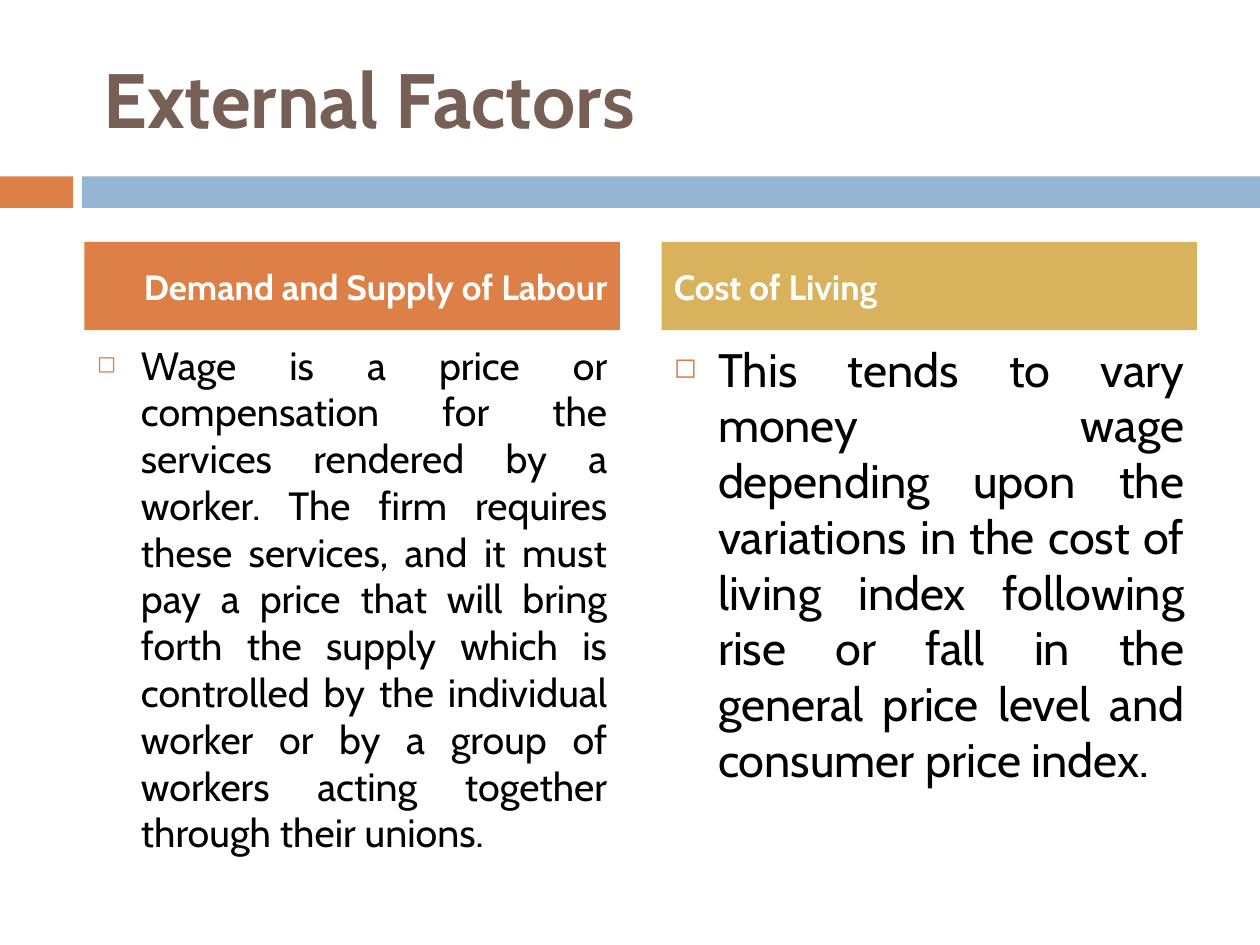
from dataclasses import dataclass

from lxml.etree import SubElement
from pptx import Presentation
from pptx.dml.color import RGBColor
from pptx.enum.shapes import MSO_SHAPE as Shape
from pptx.enum.text import MSO_ANCHOR as Anchor, PP_ALIGN as Align
from pptx.oxml.ns import qn
from pptx.util import Inches, Pt

FONT = "Cabin"
ORANGE, BLUE, GOLD = "DD8047", "94B6D2", "D8B25C"
BROWN, BLACK, WHITE = "775F55", "000000", "FFFFFF"

# Two equal columns, measured in inches
COLUMN_LEFT, COLUMN_WIDTH, COLUMN_STEP = 0.67, 4.25, 4.58
HEADING_TOP, HEADING_HEIGHT = 1.92, 0.7
BODY_TOP, BODY_HEIGHT = 2.67, 3.92
BAND_TOP, BAND_HEIGHT = 1.4, 0.25
INDENT = 0.35


@dataclass
class Factor:
    heading: str
    heading_align: Align
    color: str
    body: str
    body_size: float


FACTORS = [
    Factor("Demand and Supply of Labour", Align.RIGHT, ORANGE,
           "Wage is a price or compensation for the services rendered by a "
           "worker. The firm requires these services, and it must pay a price "
           "that will bring forth the supply which is controlled by the "
           "individual worker or by a group of workers acting together "
           "through their unions.", 22.5),
    Factor("Cost of Living", Align.JUSTIFY, GOLD,
           "This tends to vary money wage depending upon the variations in the "
           "cost of living index following rise or fall in the general price "
           "level and consumer price index.", 26.8),
]


def rgb(color: str) -> RGBColor:
    return RGBColor.from_string(color)


def add_bar(slide, left: float, top: float, width: float, height: float, color: str):
    bar = slide.shapes.add_shape(
        Shape.RECTANGLE, Inches(left), Inches(top), Inches(width), Inches(height))
    bar.fill.solid()
    bar.fill.fore_color.rgb = rgb(color)
    bar.line.fill.background()
    bar.shadow.inherit = False
    return bar


def add_box(slide, left: float, top: float, width: float, height: float):
    return slide.shapes.add_textbox(
        Inches(left), Inches(top), Inches(width), Inches(height))


def set_text(shape, text: str, size: float, color: str, align: Align,
             anchor: Anchor = Anchor.MIDDLE, bold: bool = False):
    frame = shape.text_frame
    frame.word_wrap = True
    frame.vertical_anchor = anchor
    frame.text = text
    paragraph = frame.paragraphs[0]
    paragraph.alignment = align
    font = paragraph.runs[0].font
    font.name, font.size, font.bold = FONT, Pt(size), bold
    font.color.rgb = rgb(color)
    return paragraph


def add_bullet(paragraph, symbol: str, color: str, percent: int) -> None:
    properties = paragraph._p.get_or_add_pPr()
    properties.set("marL", str(Inches(INDENT)))
    properties.set("indent", str(-Inches(INDENT)))
    bullet_color = SubElement(properties, qn("a:buClr"))
    SubElement(bullet_color, qn("a:srgbClr"), val=color)
    SubElement(properties, qn("a:buSzPct"), val=str(percent * 1000))
    SubElement(properties, qn("a:buChar"), char=symbol)


def add_factor(slide, column: int, factor: Factor) -> None:
    left = COLUMN_LEFT + column * COLUMN_STEP
    body = add_box(slide, left, BODY_TOP, COLUMN_WIDTH, BODY_HEIGHT)
    paragraph = set_text(body, factor.body, factor.body_size, BLACK,
                         Align.JUSTIFY, Anchor.TOP)
    paragraph.space_before = Pt(7)
    paragraph.line_spacing = 0.99
    add_bullet(paragraph, "◻", ORANGE, 60)

    heading = add_bar(slide, left, HEADING_TOP, COLUMN_WIDTH, HEADING_HEIGHT, factor.color)
    paragraph = set_text(heading, factor.heading, 20, WHITE, factor.heading_align, bold=True)
    paragraph.space_before = Pt(7)


def main() -> None:
    presentation = Presentation()
    presentation.slide_width, presentation.slide_height = Inches(10), Inches(7.5)
    slide = presentation.slides.add_slide(presentation.slide_layouts[6])

    # Band under the title
    add_bar(slide, 0, BAND_TOP, 0.58, BAND_HEIGHT, ORANGE)
    add_bar(slide, 0.65, BAND_TOP, 9.35, BAND_HEIGHT, BLUE)

    # Title
    title = add_box(slide, 0.58, 0.3, 8.92, 0.95)
    title.text_frame.margin_left = Inches(0.24)
    set_text(title, "External Factors", 44, BROWN, Align.LEFT, bold=True)

    # Factor columns
    for column, factor in enumerate(FACTORS):
        add_factor(slide, column, factor)

    presentation.save("out.pptx")


if __name__ == "__main__":
    main()
